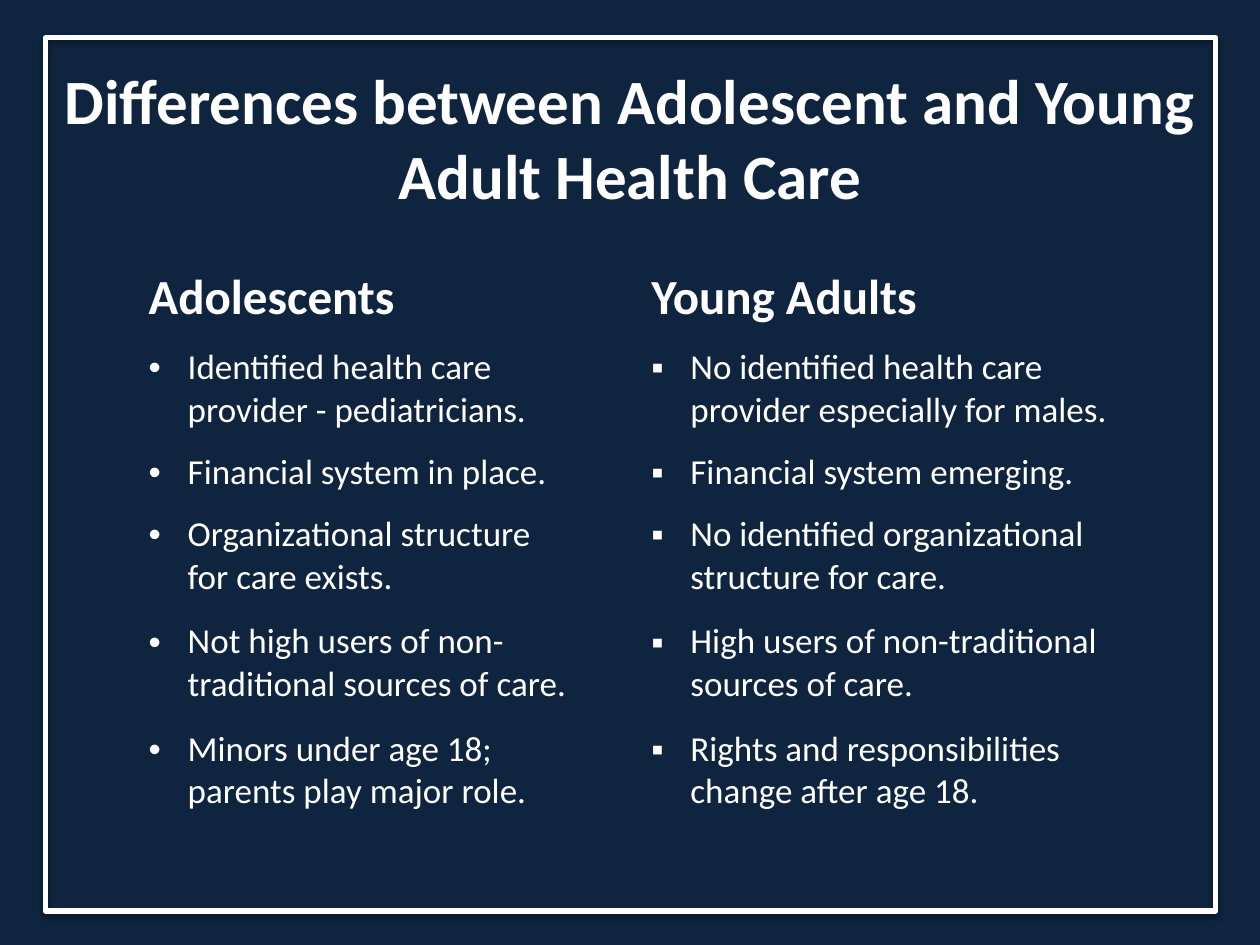
from lxml import etree
from pptx import Presentation
from pptx.dml.color import RGBColor
from pptx.enum import shapes, text
from pptx.oxml import parse_xml
from pptx.oxml.ns import nsdecls, qn
from pptx.util import Inches, Pt

COLORS = {"navy": "0F243E", "navy_light": "102640", "white": "FFFFFF", "shadow": "000000"}
FONT = "Calibri"
TITLE = "Differences between Adolescent and Young Adult Health Care"
HEADINGS = ("Adolescents", "Young Adults")
BULLETS = ("•", "▪")
COMPARISONS = [
    ("Identified health care provider - pediatricians.",
     "No identified health care provider especially for males."),
    ("Financial system in place.", "Financial system emerging."),
    ("Organizational structure for care exists.",
     "No identified organizational structure for care."),
    ("Not high users of non-traditional sources of care.",
     "High users of non-traditional sources of care."),
    ("Minors under age 18; parents play major role.",
     "Rights and responsibilities change after age 18."),
]
COLUMN_WIDTHS = (3.55, 0.44, 3.95)
ROW_HEIGHTS = (0.6, 0.85, 0.48, 0.85, 0.85, 0.85)
TEXT_COLUMNS = (0, 2)
INDENT = Inches(0.31)
NO_STYLE = "{2D5ABB26-0587-4C30-8999-92F81FD0307C}"


def color(name):
    return RGBColor.from_string(COLORS[name])


def write(para, words, size, bold=False):
    span = para.add_run()
    span.text = words
    span.font.name = FONT
    span.font.size = Pt(size)
    span.font.bold = bold
    span.font.color.rgb = color("white")


def add_bullet(para, mark):
    properties = para._p.get_or_add_pPr()
    properties.set("marL", str(INDENT))
    properties.set("indent", str(-INDENT))
    etree.SubElement(properties, qn("a:buFont"), typeface="Arial")
    etree.SubElement(properties, qn("a:buChar"), char=mark)


def paint_background(page):
    fill = page.background.fill
    fill.gradient()
    fill.gradient_angle = 90
    for stop, name, position in zip(fill.gradient_stops, ("navy", "navy_light"), (0, 0.19)):
        stop.color.rgb = color(name)
        stop.position = position


def add_frame(page):
    frame = page.shapes.add_shape(
        shapes.MSO_SHAPE.RECTANGLE, Inches(0.36), Inches(0.3), Inches(9.29), Inches(6.93))
    frame.fill.background()
    frame.line.color.rgb = color("white")
    frame.line.width = Pt(3)
    frame._element.spPr.append(parse_xml(
        f'<a:effectLst {nsdecls("a")}><a:outerShdw blurRad="{Pt(3.1)}" dist="{Pt(1.8)}" '
        f'dir="5400000" rotWithShape="0"><a:srgbClr val="{COLORS["shadow"]}">'
        '<a:alpha val="35000"/></a:srgbClr></a:outerShdw></a:effectLst>'))
    page.shapes._spTree.insert(2, frame._element)


def add_title(page):
    title = page.shapes.title
    title.left, title.top = Inches(0.25), Inches(0.42)
    title.width, title.height = Inches(9.5), Inches(1.33)
    title.text_frame.word_wrap = True
    title.text_frame.vertical_anchor = text.MSO_ANCHOR.MIDDLE
    para = title.text_frame.paragraphs[0]
    para.alignment = text.PP_ALIGN.CENTER
    write(para, TITLE, 36, True)


def add_comparison(page):
    holder = page.shapes.add_table(
        len(ROW_HEIGHTS), len(COLUMN_WIDTHS), Inches(1.08), Inches(2.06),
        Inches(sum(COLUMN_WIDTHS)), Inches(sum(ROW_HEIGHTS)))
    table = holder.table
    table.first_row = table.horz_banding = False
    table._tbl.tblPr.find(qn("a:tableStyleId")).text = NO_STYLE
    for column, width in zip(table.columns, COLUMN_WIDTHS):
        column.width = Inches(width)
    for row, height in zip(table.rows, ROW_HEIGHTS):
        row.height = Inches(height)
    for cell in table.iter_cells():
        cell.fill.background()
        cell.vertical_anchor = text.MSO_ANCHOR.MIDDLE
    for row_index, entries in enumerate([HEADINGS] + COMPARISONS):
        for column_index, mark, words in zip(TEXT_COLUMNS, BULLETS, entries):
            para = table.cell(row_index, column_index).text_frame.paragraphs[0]
            if row_index:
                add_bullet(para, mark)
                write(para, words, 20)
            else:
                write(para, words, 28, True)


def main():
    deck = Presentation()
    deck.slide_width, deck.slide_height = Inches(10), Inches(7.5)
    page = deck.slides.add_slide(deck.slide_layouts[5])
    paint_background(page)
    add_frame(page)
    add_title(page)
    add_comparison(page)
    deck.save("out.pptx")


if __name__ == "__main__":
    main()
